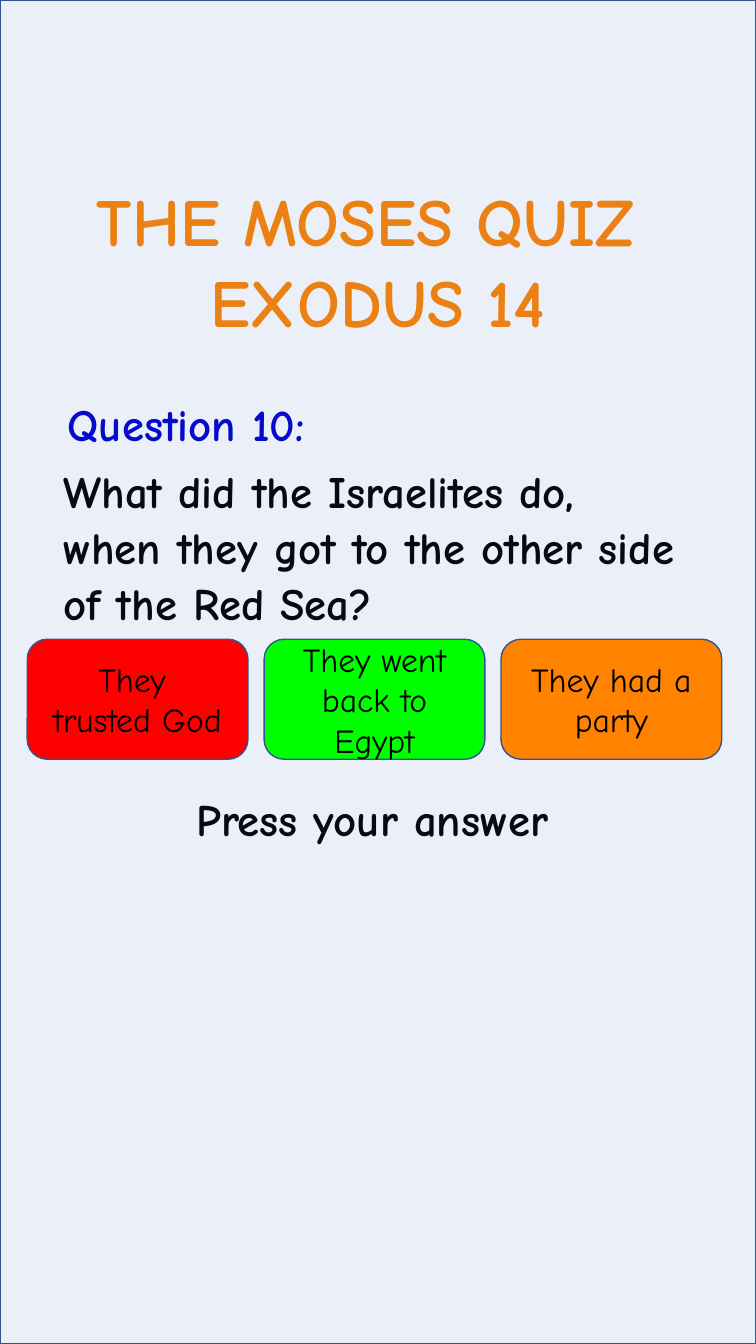
from lxml.etree import SubElement
from pptx import Presentation
from pptx.dml.color import RGBColor
from pptx.enum.shapes import MSO_SHAPE as Shape
from pptx.enum.text import MSO_ANCHOR as Anchor, MSO_AUTO_SIZE as AutoSize, PP_ALIGN as Align
from pptx.oxml import parse_xml
from pptx.oxml.ns import nsdecls, qn
from pptx.util import Inches, Pt

ORANGE = RGBColor(0xFF, 0x82, 0x00)
RED = RGBColor(0xFF, 0x00, 0x00)
GREEN = RGBColor(0x00, 0xFF, 0x00)
BLUE = RGBColor(0x00, 0x00, 0xCC)
BLACK = RGBColor(0x00, 0x00, 0x00)
VEIL = RGBColor(0x44, 0x72, 0xC4)
EDGE = RGBColor(0x32, 0x54, 0x91)

FONT = "Comic Neue"
HEADING = ["THE MOSES QUIZ ", "EXODUS 14"]
LABEL = ["Question 10:"]
QUESTION = ["What did the Israelites do, when they got to the other side of the Red Sea?"]
PROMPT = ["Press your answer"]
ANSWERS = [
    (["They ", "trusted God"], RED),
    (["They went back to Egypt"], GREEN),
    (["They had a party"], ORANGE),
]

WIDTH, HEIGHT = 7.5, 13.33
ANSWER_LEFT, ANSWER_TOP, ANSWER_PITCH = 0.27, 6.34, 2.35
ANSWER_WIDTH, ANSWER_HEIGHT = 2.19, 1.19


def place(part, left, top, width, height):
    part.left, part.top = Inches(left), Inches(top)
    part.width, part.height = Inches(width), Inches(height)


def write(part, lines, size, color, bold=True, align=Align.CENTER, anchor=Anchor.TOP,
          wrap=True, spacing=1.0, before=0):
    frame = part.text_frame
    frame.text = "\n".join(lines)
    frame.auto_size = AutoSize.NONE if wrap else AutoSize.SHAPE_TO_FIT_TEXT
    frame.word_wrap = wrap
    frame.vertical_anchor = anchor
    for paragraph in frame.paragraphs:
        paragraph.alignment = align
        paragraph.line_spacing = spacing
        paragraph.space_before = Pt(before)
        font = paragraph.font
        font.name, font.size, font.bold = FONT, Pt(size), bold
        font.color.rgb = color


def outline_text(part, color, width):
    for paragraph in part.text_frame.paragraphs:
        for run in paragraph.runs:
            run.font._element.insert(0, parse_xml(
                f'<a:ln {nsdecls("a")} w="{Pt(width)}"><a:solidFill>'
                f'<a:srgbClr val="{color}"/></a:solidFill></a:ln>'))


def add_panel(slide, preset, box, color):
    panel = slide.shapes.add_shape(preset, *map(Inches, box))
    panel.shadow.inherit = False
    panel.fill.solid()
    panel.fill.fore_color.rgb = color
    panel.line.color.rgb = EDGE
    panel.line.width = Pt(1)
    return panel


def main():
    deck = Presentation()
    deck.slide_width, deck.slide_height = Inches(WIDTH), Inches(HEIGHT)
    slide = deck.slides.add_slide(deck.slide_layouts[0])

    heading = slide.shapes.title
    place(heading, 0.3, 1.73, 6.89, 1.72)
    write(heading, HEADING, 48, ORANGE, wrap=False)
    outline_text(heading, RED, 1.06)

    question = slide.placeholders[1]
    place(question, 0.53, 4.53, 6.36, 1.77)
    write(question, QUESTION, 32, BLACK, align=Align.LEFT, spacing=Pt(40), before=7.5)

    label = slide.shapes.add_textbox(*map(Inches, (0.33, 3.89, 3.04, 0.64)))
    write(label, LABEL, 32, BLUE, wrap=False)

    prompt = slide.shapes.add_textbox(*map(Inches, (1.85, 7.86, 4.22, 0.72)))
    write(prompt, PROMPT, 32, BLACK, align=Align.LEFT, spacing=0.9, before=7.5)

    veil = add_panel(slide, Shape.RECTANGLE, (0, 0, WIDTH, HEIGHT), VEIL)
    veil_color = veil.fill._xPr.find(qn("a:solidFill"))[0]
    SubElement(veil_color, qn("a:alpha")).set("val", "10000")

    for column, (lines, color) in enumerate(ANSWERS):
        left = ANSWER_LEFT + column * ANSWER_PITCH
        box = (left, ANSWER_TOP, ANSWER_WIDTH, ANSWER_HEIGHT)
        answer = add_panel(slide, Shape.ROUNDED_RECTANGLE, box, color)
        write(answer, lines, 24, BLACK, bold=False, anchor=Anchor.MIDDLE)

    deck.save("out.pptx")


if __name__ == "__main__":
    main()
